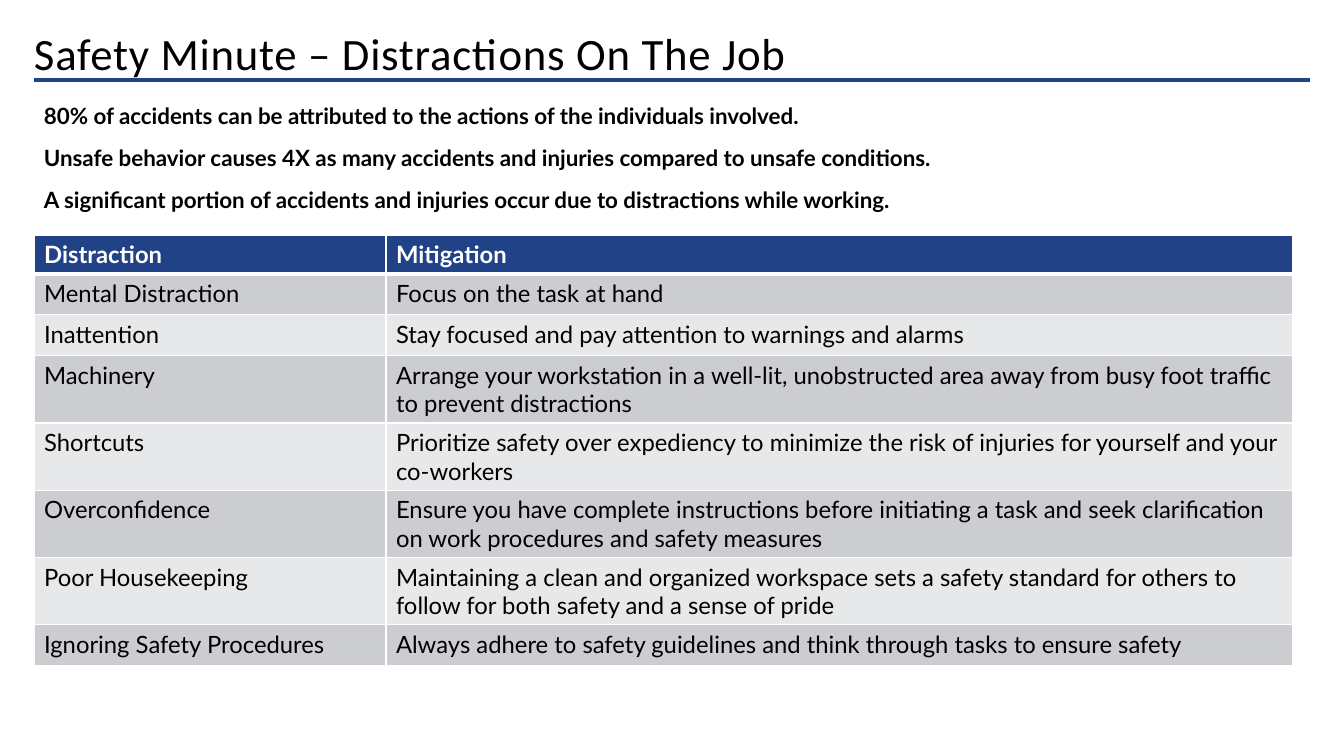
from lxml.etree import SubElement
from pptx import Presentation
from pptx.dml.color import RGBColor
from pptx.enum.shapes import MSO_CONNECTOR
from pptx.enum.text import MSO_ANCHOR
from pptx.oxml.ns import qn
from pptx.util import Pt

PX = 914400 / 100.8
NAVY, WHITE, BLACK = "224288", "FFFFFF", "000000"
BANDS = ["CCCDD1", "E7E8E9"]
LEFT, WIDTH = 34, 1260


def px(*lengths):
    return [round(length * PX) for length in lengths]


def write(paragraph, text, size, font="Lato", color=BLACK, bold=False, tracking=0):
    run = paragraph.add_run()
    run.text = text
    run.font.size = Pt(size)
    run.font.name = font
    run.font.bold = bold
    run.font.color.rgb = RGBColor.from_string(color)
    if tracking:
        run.font._element.set("spc", str(tracking))


deck = Presentation()
deck.slide_width, deck.slide_height = px(1344, 756)
slide = deck.slides.add_slide(deck.slide_layouts[6])

# Title and rule below it
rule = slide.shapes.add_connector(MSO_CONNECTOR.STRAIGHT, *px(LEFT, 80, 1310, 80))
rule.line.color.rgb = RGBColor.from_string(NAVY)
rule.line.width = Pt(2.25)
SubElement(rule._element.spPr, qn("a:effectLst"))

title = slide.shapes.add_textbox(*px(LEFT, 33, WIDTH, 46)).text_frame
title.word_wrap = True
title.vertical_anchor = MSO_ANCHOR.BOTTOM
title.margin_left = title.margin_right = title.margin_top = title.margin_bottom = 0
write(title.paragraphs[0], "Safety Minute – Distractions On The Job", 32,
      font="Calibri", tracking=50)

# Key facts
FACTS = [
    "80% of accidents can be attributed to the actions of the individuals involved.",
    "Unsafe behavior causes 4X as many accidents and injuries compared to unsafe conditions.",
    "A significant portion of accidents and injuries occur due to distractions while working.",
]
facts = slide.shapes.add_textbox(*px(LEFT, 93, WIDTH, 135)).text_frame
facts.word_wrap = True
for i, fact in enumerate(FACTS):
    paragraph = facts.add_paragraph() if i else facts.paragraphs[0]
    paragraph.line_spacing = 1.15
    paragraph.space_after = Pt(8)
    write(paragraph, fact, 16, bold=True)

# Distractions and mitigations, with row heights
ROWS = [
    (38, "Distraction", "Mitigation"),
    (41, "Mental Distraction", "Focus on the task at hand"),
    (41, "Inattention", "Stay focused and pay attention to warnings and alarms"),
    (67, "Machinery", "Arrange your workstation in a well-lit, unobstructed area "
     "away from busy foot traffic to prevent distractions"),
    (67, "Shortcuts", "Prioritize safety over expediency to minimize the risk of "
     "injuries for yourself and your co-workers"),
    (67, "Overconfidence", "Ensure you have complete instructions before initiating a "
     "task and seek clarification on work procedures and safety measures"),
    (67, "Poor Housekeeping", "Maintaining a clean and organized workspace sets a safety "
     "standard for others to follow for both safety and a sense of pride"),
    (41, "Ignoring Safety Procedures", "Always adhere to safety guidelines and think "
     "through tasks to ensure safety"),
]
table_height = sum(row[0] for row in ROWS)
mitigations = slide.shapes.add_table(
    len(ROWS), 2, *px(LEFT, 235, WIDTH, table_height)).table
for column, width in zip(mitigations.columns, px(352, 907)):
    column.width = width

for r, (height, *texts) in enumerate(ROWS):
    mitigations.rows[r].height = px(height)[0]
    for c, text in enumerate(texts):
        cell = mitigations.cell(r, c)
        write(cell.text_frame.paragraphs[0], text, 17,
              color=BLACK if r else WHITE, bold=r == 0)
        # White borders, thicker between header and body
        thick_side = {0: "lnB", 1: "lnT"}.get(r)
        for side in ("lnL", "lnR", "lnT", "lnB"):
            width = Pt(3 if side == thick_side else 1)
            border = SubElement(cell._tc.get_or_add_tcPr(), qn(f"a:{side}"), w=str(width))
            SubElement(SubElement(border, qn("a:solidFill")), qn("a:srgbClr"), val=WHITE)
        cell.fill.solid()
        cell.fill.fore_color.rgb = RGBColor.from_string(BANDS[(r - 1) % 2] if r else NAVY)

deck.save("out.pptx")
